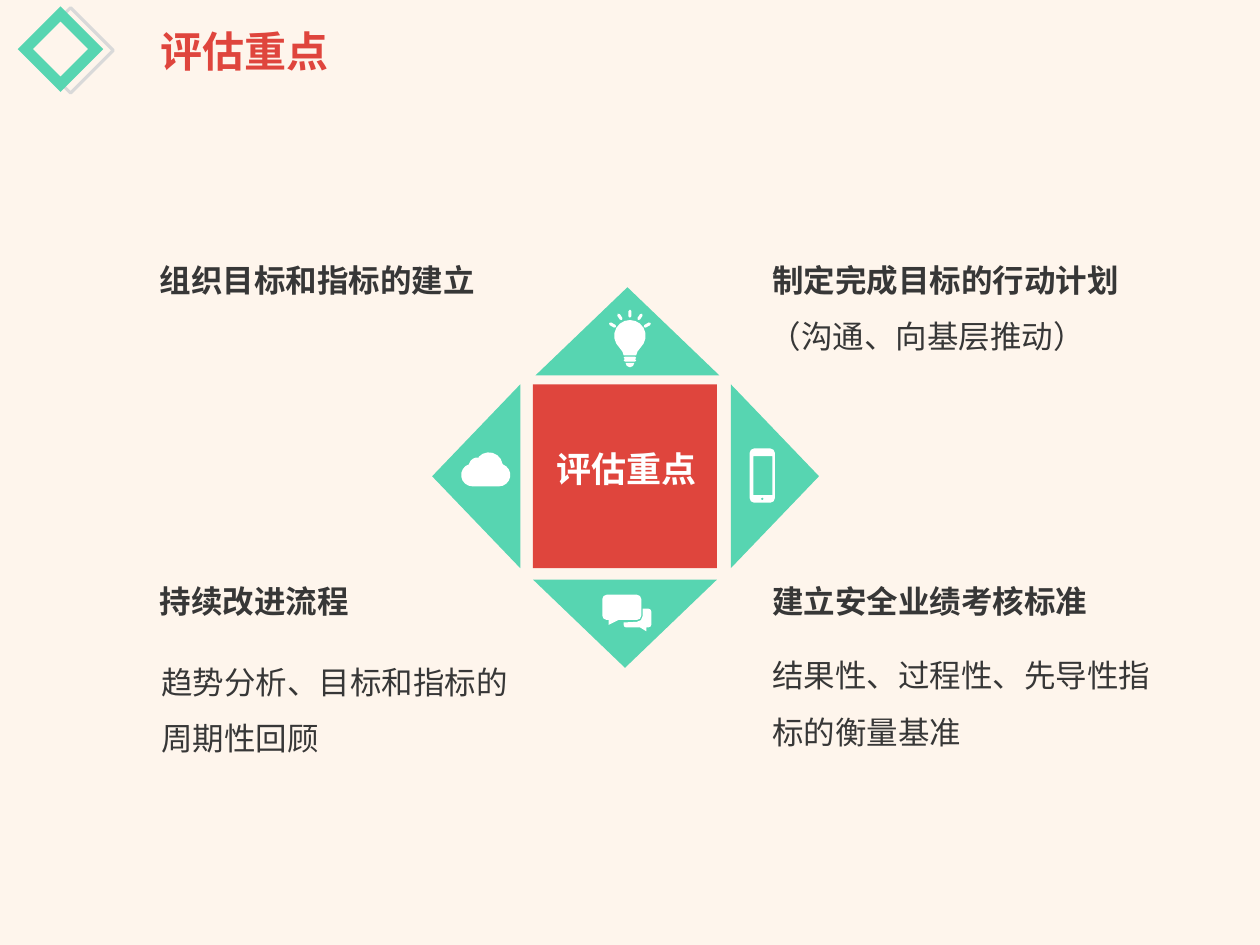
"""Build the slide on the key points of assessment."""
from dataclasses import dataclass
from math import atan2, cos, degrees, radians, sin

from pptx import Presentation
from pptx import util as u
from pptx.dml.color import RGBColor
from pptx.enum import shapes, text

Point = tuple[float, float]
Path = list[Point]
Box = tuple[float, float, float, float]
Kind = shapes.MSO_SHAPE


@dataclass(frozen=True)
class Theme:
    """Colours, font and type sizes."""
    back: str = "FEF5EC"
    mint: str = "57D5B1"
    red: str = "DF453D"
    ink: str = "373737"
    grey: str = "D9D9D9"
    white: str = "FFFFFF"
    font: str = "Noto Sans CJK SC"
    title: int = 24
    core: int = 20
    body: int = 18


@dataclass(frozen=True)
class Note:
    """A text box beside the diamond."""
    words: str
    box: Box
    bold: bool = False
    wrap: bool = False


@dataclass(frozen=True)
class Wedge:
    """A triangle that points away from the core."""
    left: float
    top: float
    turn: int


THEME = Theme()
SIDE, DEPTH = 1.46, 0.7
WEDGES = [Wedge(4.25, 2.28, 0), Wedge(5.42, 3.43, 90),
          Wedge(4.23, 4.6, 180), Wedge(3.05, 3.43, 270)]
NOTES = [
    Note("组织目标和指标的建立", (1.17, 2.02, 2.74, 0.4), bold=True),
    Note("制定完成目标的行动计划", (6.03, 2.02, 2.98, 0.4), bold=True),
    Note("（沟通、向基层推动）", (6.01, 2.47, 2.74, 0.4)),
    Note("建立安全业绩考核标准", (6.03, 4.57, 2.73, 0.4), bold=True),
    Note("结果性、过程性、先导性指标的衡量基准", (6.03, 5.01, 3.4, 0.96), wrap=True),
    Note("持续改进流程", (1.17, 4.57, 1.72, 0.4), bold=True),
    Note("趋势分析、目标和指标的周期性回顾", (1.18, 5.06, 3.18, 1.01), wrap=True),
]


def tint(code: str) -> RGBColor:
    """Turn a hex code into a colour."""
    return RGBColor.from_string(code)


def write(item, words: str, *, size: int = THEME.body, tone: str = THEME.ink,
          bold: bool = False, wrap: bool = False, lead: float = 1.0,
          align=text.PP_ALIGN.LEFT) -> None:
    """Fill an item with one formatted paragraph."""
    frame = item.text_frame
    frame.word_wrap = wrap
    frame.auto_size = text.MSO_AUTO_SIZE.SHAPE_TO_FIT_TEXT
    frame.vertical_anchor = text.MSO_ANCHOR.TOP
    para = frame.paragraphs[0]
    para.alignment, para.line_spacing = align, lead
    run = para.add_run()
    run.text = words
    font = run.font
    font.name, font.size, font.bold = THEME.font, u.Pt(size), bold
    font.color.rgb = tint(tone)


def paint(item, fill: str = "", line: str = "") -> None:
    """Give an item a plain fill or a thin outline."""
    item.shadow.inherit = False
    if fill:
        item.fill.solid()
        item.fill.fore_color.rgb = tint(fill)
    else:
        item.fill.background()
    if line:
        item.line.color.rgb, item.line.width = tint(line), u.Pt(1.75)
    else:
        item.line.fill.background()


def form(slide, kind, box: Box, turn: int = 0, **look: str):
    """Add a preset shape."""
    item = slide.shapes.add_shape(kind, *map(u.Inches, box))
    item.rotation = turn
    paint(item, **look)
    return item


def arc(x: float, y: float, r: float, start: float, end: float) -> Path:
    """Sample an arc, finer for a larger radius, clockwise from the right."""
    step = 90 if r < 0.02 else 45 if r < 0.05 else 20
    count = max(2, round(abs(end - start) / step))
    turns = [radians(start + (end - start) * i / count) for i in range(count + 1)]
    return [(x + r * cos(a), y + r * sin(a)) for a in turns]


def pill(a: Point, b: Point, r: float) -> Path:
    """Outline a bar with blunt ends."""
    way = degrees(atan2(b[1] - a[1], b[0] - a[0]))
    return arc(*b, r, way - 90, way + 90) + arc(*a, r, way + 90, way + 270)


def panel(x: float, y: float, w: float, h: float, r: float,
          tail: Path | None = None) -> Path:
    """Outline a round-cornered box with an optional tail below."""
    right, low = x + w - r, y + h - r
    return (arc(x + r, y + r, r, 180, 270) + arc(right, y + r, r, 270, 360)
            + arc(right, low, r, 0, 90) + (tail or []) + arc(x + r, low, r, 90, 180))


def bulb() -> list[Path]:
    """Outline the light bulb."""
    glass = arc(5, 2.665, 0.125, 150, 390) + [
        (5.06, 2.79), (5.05, 2.82), (4.95, 2.82), (4.94, 2.79)]
    rays = [((5 + 0.12 * k, 2.59), (5 + 0.155 * k, 2.57)) for k in (-1, 1)]
    rays += [((5 + 0.07 * k, 2.53), (5 + 0.09 * k, 2.5)) for k in (-1, 1)]
    rays.append(((5, 2.51), (5, 2.47)))
    rings = [pill((4.96, y), (5.04, y), 0.01) for y in (2.84, 2.86)]
    return [glass, *(pill(*ray, 0.012) for ray in rays), *rings,
            arc(5, 2.88, 0.035, 0, 180)]


def phone() -> list[Path]:
    """Outline the phone with its screen and button."""
    return [panel(5.95, 3.56, 0.2, 0.43, 0.035),
            [(5.98, 3.62), (5.98, 3.93), (6.13, 3.93), (6.13, 3.62)],
            arc(6.05, 3.96, 0.012, 360, 0)]


def chat() -> list[Path]:
    """Outline the two speech bubbles."""
    front = panel(4.78, 4.72, 0.31, 0.2, 0.035,
                  [(4.91, 4.92), (4.83, 4.96), (4.83, 4.92)])
    rear = ([(5.1, 4.83)] + arc(5.055, 4.89, 0.045, 0, 90)
            + [(4.95, 4.94)] + arc(4.97, 4.96, 0.02, 180, 90)
            + [(5.08, 4.98), (5.13, 5.01), (5.13, 4.98)]
            + arc(5.145, 4.955, 0.025, 90, 0) + arc(5.145, 4.855, 0.025, 0, -90))
    return [rear, front]


def cloud() -> list[Path]:
    """Outline the cloud."""
    return [arc(3.75, 3.77, 0.09, 90, 253) + arc(3.79, 3.7, 0.07, 195, 280)
            + arc(3.88, 3.7, 0.11, 222, 350) + arc(3.96, 3.77, 0.09, -70, 90)]


def icon(slide, paths: list[Path]) -> None:
    """Draw closed paths as one white shape."""
    lines = [[(u.Inches(x), u.Inches(y)) for x, y in path] for path in paths]
    pen = slide.shapes.build_freeform(*lines[0][0])
    pen.add_line_segments(lines[0][1:], close=True)
    for line in lines[1:]:
        pen.move_to(*line[0])
        pen.add_line_segments(line[1:], close=True)
    paint(pen.convert_to_shape(), fill=THEME.white)


def main() -> None:
    """Build and save the slide."""
    deck = Presentation()
    deck.slide_width, deck.slide_height = u.Inches(10), u.Inches(7.5)
    slide = deck.slides.add_slide(deck.slide_layouts[5])
    slide.background.fill.solid()
    slide.background.fill.fore_color.rgb = tint(THEME.back)
    head = slide.shapes.title
    head.left, head.top, head.width, head.height = map(
        u.Inches, (1.17, 0.15, 1.55, 0.5))
    write(head, "评估重点", size=THEME.title, tone=THEME.red, bold=True)
    form(slide, Kind.RECTANGLE, (0.32, 0.16, 0.48, 0.48), 45, line=THEME.grey)
    frame = form(slide, Kind.FRAME, (0.24, 0.15, 0.48, 0.48), 45, fill=THEME.mint)
    frame.adjustments[0] = 0.177
    form(slide, Kind.RECTANGLE, (4.23, 3.05, SIDE, SIDE), fill=THEME.red)
    for wedge in WEDGES:
        form(slide, Kind.ISOSCELES_TRIANGLE, (wedge.left, wedge.top, SIDE, DEPTH),
             wedge.turn, fill=THEME.mint)
    for note in NOTES:
        item = slide.shapes.add_textbox(*map(u.Inches, note.box))
        write(item, note.words, bold=note.bold, wrap=note.wrap,
              lead=1.5 if note.wrap else 1.0)
    core = slide.shapes.add_textbox(*map(u.Inches, (4.31, 3.5, 1.32, 0.44)))
    write(core, "评估重点", size=THEME.core, tone=THEME.white, bold=True,
          align=text.PP_ALIGN.CENTER)
    for paths in (bulb(), phone(), chat(), cloud()):
        icon(slide, paths)
    deck.save("out.pptx")


if __name__ == "__main__":
    main()
